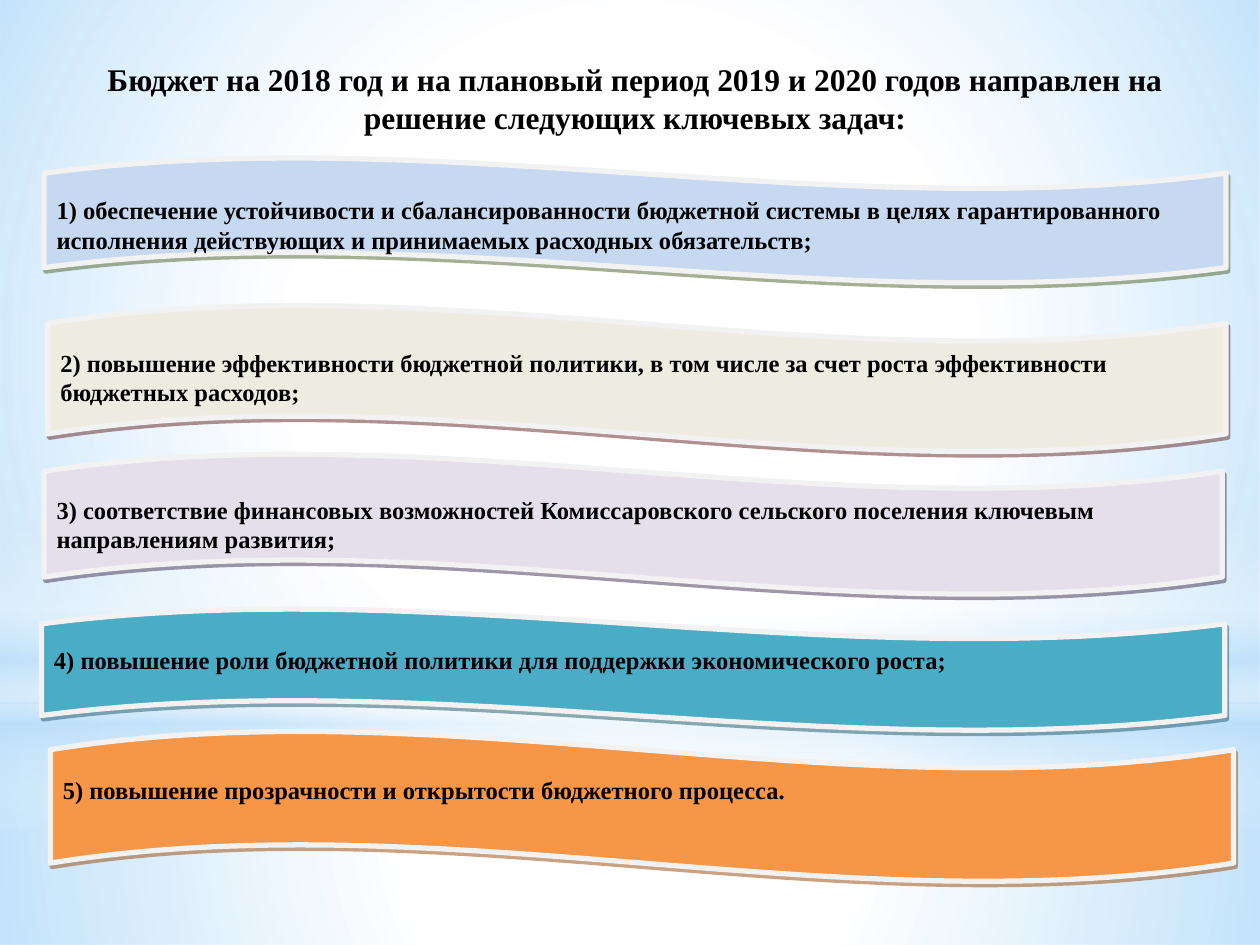
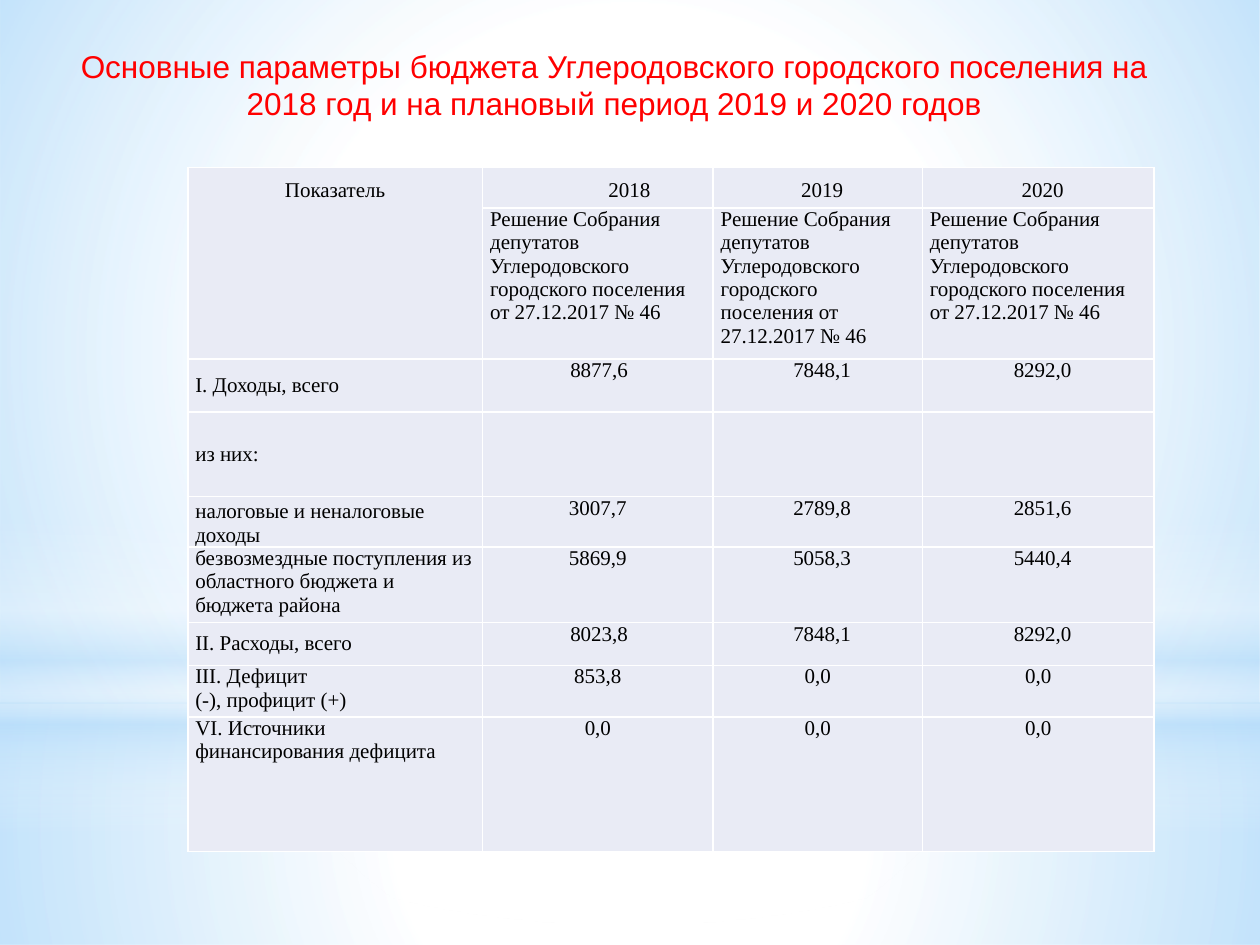
from dataclasses import dataclass
from pptx import Presentation
from pptx.dml.color import RGBColor
from pptx.enum.shapes import MSO_SHAPE
from pptx.enum.text import MSO_ANCHOR, MSO_AUTO_SIZE, PP_ALIGN
from pptx.oxml import parse_xml
from pptx.oxml.ns import nsdecls, qn
from pptx.util import Inches, Pt


@dataclass(frozen=True)
class Theme:
    serif: str = "Times New Roman"
    sans: str = "Arial"
    ink: str = "000000"
    accent: str = "FF0000"
    white: str = "FFFFFF"
    sky: str = "B4DCFA"
    wave_edge: str = "F2F2F2"
    cell: str = "E9EBF5"
    title_size: int = 18
    task_size: int = 14
    table_size: int = 12


THEME = Theme()
SLIDE_WIDTH, SLIDE_HEIGHT = Inches(10), Inches(7.5)
UNIT = SLIDE_WIDTH // 100

TASKS = [
    ("1) обеспечение устойчивости и сбалансированности бюджетной системы в целях "
     "гарантированного исполнения действующих и принимаемых расходных обязательств;",
     (3.5, 12.5, 93.8, 10), "C6D9F1", "4E6128"),
    ("2) повышение эффективности бюджетной политики, в том числе за счет роста "
     "эффективности бюджетных расходов;",
     (3.8, 24.2, 93.5, 11.7), "EEECE1", "622423"),
    ("3) соответствие финансовых возможностей Комиссаровского сельского поселения "
     "ключевым направлениям развития;",
     (3.5, 36, 93.5, 11.2), "E5DFEC", "3F3151"),
    ("4) повышение роли бюджетной политики для поддержки экономического роста;",
     (3.3, 48.3, 93.9, 9.7), "4BACC6", "205867"),
    ("5) повышение прозрачности и открытости бюджетного процесса.",
     (4, 58, 93.9, 12), "F79646", "974706"),
]

YEARS = ["2018", "2019", "2020"]
DECISION = "Решение Собрания депутатов Углеродовского городского поселения от 27.12.2017 № 46"
COLUMN_WIDTHS = [23.4, 18.3, 16.6, 18.4]
ROW_HEIGHTS = [3.2, 12, 4.2, 6.7, 4, 6, 3.4, 4.1, 10.7]
TOP, MIDDLE, BOTTOM = MSO_ANCHOR.TOP, MSO_ANCHOR.MIDDLE, MSO_ANCHOR.BOTTOM
INDICATORS = [
    (["I. Доходы, всего"], MIDDLE, ["8877,6", "7848,1", "8292,0"], [0.02, 0.07, 0.07]),
    (["из них:"], MIDDLE, [], []),
    (["налоговые и неналоговые доходы"], BOTTOM,
     ["3007,7", "2789,8", "2851,6"], [-0.07, 0.07, 0.07]),
    (["безвозмездные поступления из областного бюджета и бюджета района"], TOP,
     ["5869,9", "5058,3", "5440,4"], [-0.07, 0.07, 0.07]),
    (["II. Расходы, всего"], MIDDLE, ["8023,8", "7848,1", "8292,0"], [0.02, 0.07, 0.07]),
    (["III. Дефицит", "(-), профицит (+)"], TOP, ["853,8", "0,0", "0,0"], [0, 0, 0]),
    (["VI. Источники финансирования дефицита"], TOP, ["0,0", "0,0", "0,0"], [0, 0, 0]),
]


def grid(*cells):
    return [round(cell * UNIT) for cell in cells]


def write(frame, lines, size, font=THEME.serif, color=THEME.ink, bold=False,
          align=PP_ALIGN.LEFT, indent=0, spacing=None, after=None):
    for number, line in enumerate(lines):
        paragraph = frame.add_paragraph() if number else frame.paragraphs[0]
        paragraph.alignment = align
        if indent:
            properties = paragraph._p.get_or_add_pPr()
            properties.set("marL", "0")
            properties.set("indent", str(Inches(indent)))
        if spacing:
            paragraph.line_spacing = spacing
        if after:
            paragraph.space_after = Pt(after)
        run = paragraph.add_run()
        run.text = line
        run.font.name = font
        run.font.size = Pt(size)
        run.font.bold = bold
        run.font.color.rgb = RGBColor.from_string(color)


def add_glow(slide, master, outline, box, stops, direction):
    glow = slide.shapes.add_shape(outline, *grid(*box))
    glow.shadow.inherit = False
    glow.line.fill.background()
    glow.fill.background()
    stop_xml = "".join(
        f'<a:gs pos="{place * 1000}"><a:srgbClr val="{color}">'
        f'<a:alpha val="{opacity * 1000}"/></a:srgbClr></a:gs>'
        for place, color, opacity in stops)
    gradient = parse_xml(f'<a:gradFill {nsdecls("a")} rotWithShape="1">'
                         f'<a:gsLst>{stop_xml}</a:gsLst>{direction}</a:gradFill>')
    properties = glow._element.spPr
    properties.replace(properties.find(qn("a:noFill")), gradient)
    tree = master.shapes.element
    glow._element.nvSpPr.cNvPr.set("id", str(100 + len(tree)))
    tree.append(glow._element)


def add_backdrop(slide, master):
    white, sky = THEME.white, THEME.sky
    radial = ('<a:path path="circle"><a:fillToRect l="50000" t="50000" '
              'r="50000" b="50000"/></a:path>')
    vertical = '<a:lin ang="5400000" scaled="0"/>'
    horizon = 55.8
    add_glow(slide, master, MSO_SHAPE.RECTANGLE, (0, horizon, 100, 75 - horizon),
             [(0, white, 91), (37, white, 76), (100, sky, 79)], radial)
    add_glow(slide, master, MSO_SHAPE.RECTANGLE, (0, 0, 100, horizon),
             [(0, white, 89), (48, white, 62), (100, sky, 79)], radial)
    add_glow(slide, master, MSO_SHAPE.RECTANGLE, (0, 41.2, 100, 25),
             [(0, white, 0), (29, white, 30), (45, sky, 40),
              (55, white, 26), (65, sky, 60), (100, white, 0)], vertical)
    add_glow(slide, master, MSO_SHAPE.OVAL, (0, 17.5, 100, 55.8),
             [(0, white, 100), (56, white, 0)], radial)


def add_title(slide, box, lines, anchor=TOP, wrap=True, **style):
    frame = slide.shapes.add_textbox(*grid(*box)).text_frame
    frame.word_wrap = wrap
    frame.auto_size = MSO_AUTO_SIZE.SHAPE_TO_FIT_TEXT
    frame.vertical_anchor = anchor
    write(frame, lines, THEME.title_size, align=PP_ALIGN.CENTER, **style)


def add_wave(slide, task, box, color, shade):
    wave = slide.shapes.add_shape(MSO_SHAPE.WAVE, *grid(*box))
    wave.adjustments[0] = 0.125
    wave.adjustments[1] = 0
    wave.fill.solid()
    wave.fill.fore_color.rgb = RGBColor.from_string(color)
    wave.line.color.rgb = RGBColor.from_string(THEME.wave_edge)
    wave.line.width = Pt(3)
    wave.shadow.inherit = False
    wave._element.spPr.find(qn("a:effectLst")).append(parse_xml(
        f'<a:outerShdw {nsdecls("a")} blurRad="0" dist="{Pt(2.2)}" dir="{63 * 60000}" '
        f'algn="ctr" rotWithShape="0"><a:srgbClr val="{shade}">'
        '<a:alpha val="50000"/></a:srgbClr></a:outerShdw>'))
    wave.text_frame.word_wrap = True
    wave.text_frame.vertical_anchor = TOP
    write(wave.text_frame, [task], THEME.task_size, bold=True, after=10)


def style_cell(cell):
    cell.margin_left = cell.margin_right = Inches(0.06)
    cell.margin_top = cell.margin_bottom = 0
    properties = cell._tc.get_or_add_tcPr()
    for side in ("lnL", "lnR", "lnT", "lnB"):
        properties.append(parse_xml(
            f'<a:{side} {nsdecls("a")} w="{Pt(1)}"><a:solidFill>'
            f'<a:srgbClr val="{THEME.white}"/></a:solidFill></a:{side}>'))
    cell.fill.solid()
    cell.fill.fore_color.rgb = RGBColor.from_string(THEME.cell)


def fill_cell(cell, lines, anchor=TOP, **style):
    cell.vertical_anchor = anchor
    write(cell.text_frame, lines, THEME.table_size, **style)


def add_budget_table(slide):
    box = grid(14.9, 13.3, sum(COLUMN_WIDTHS), sum(ROW_HEIGHTS))
    budget = slide.shapes.add_table(len(ROW_HEIGHTS), len(COLUMN_WIDTHS), *box).table
    budget.first_row = budget.horz_banding = False
    for column, width in zip(budget.columns, grid(*COLUMN_WIDTHS)):
        column.width = width
    for row, height in zip(budget.rows, grid(*ROW_HEIGHTS)):
        row.height = height
    for cell in budget.iter_cells():
        style_cell(cell)
    budget.cell(0, 0).merge(budget.cell(1, 0))
    center = PP_ALIGN.CENTER
    headings = zip(["Показатель"] + YEARS, [-0.07, 0.5, 0.07, 0.07])
    for column, (heading, indent) in enumerate(headings):
        fill_cell(budget.cell(0, column), [heading], align=center, indent=indent, spacing=1.5)
    for column in range(1, len(COLUMN_WIDTHS)):
        fill_cell(budget.cell(1, column), [DECISION])
    for row, (label, anchor, amounts, indents) in enumerate(INDICATORS, 2):
        fill_cell(budget.cell(row, 0), label, anchor)
        for column, (amount, indent) in enumerate(zip(amounts, indents), 1):
            fill_cell(budget.cell(row, column), [amount], align=center, indent=indent)


def main():
    deck = Presentation()
    deck.slide_width, deck.slide_height = SLIDE_WIDTH, SLIDE_HEIGHT
    blank = deck.slide_layouts[6]

    tasks_slide = deck.slides.add_slide(blank)
    add_backdrop(tasks_slide, deck.slide_master)
    for task in TASKS:
        add_wave(tasks_slide, *task)
    add_title(tasks_slide, (3.5, 4.2, 93.8, 7.1),
              ["Бюджет на 2018 год и на плановый период 2019 и 2020 годов "
               "направлен на решение следующих ключевых задач:"],
              anchor=MIDDLE, bold=True)

    budget_slide = deck.slides.add_slide(blank)
    add_budget_table(budget_slide)
    add_title(budget_slide, (4.6, 3.2, 88.3, 7.1),
              ["Основные параметры бюджета Углеродовского городского поселения на",
               "2018 год и на плановый период 2019 и 2020 годов"],
              wrap=False, font=THEME.sans, color=THEME.accent)
    deck.save("out.pptx")


if __name__ == "__main__":
    main()
